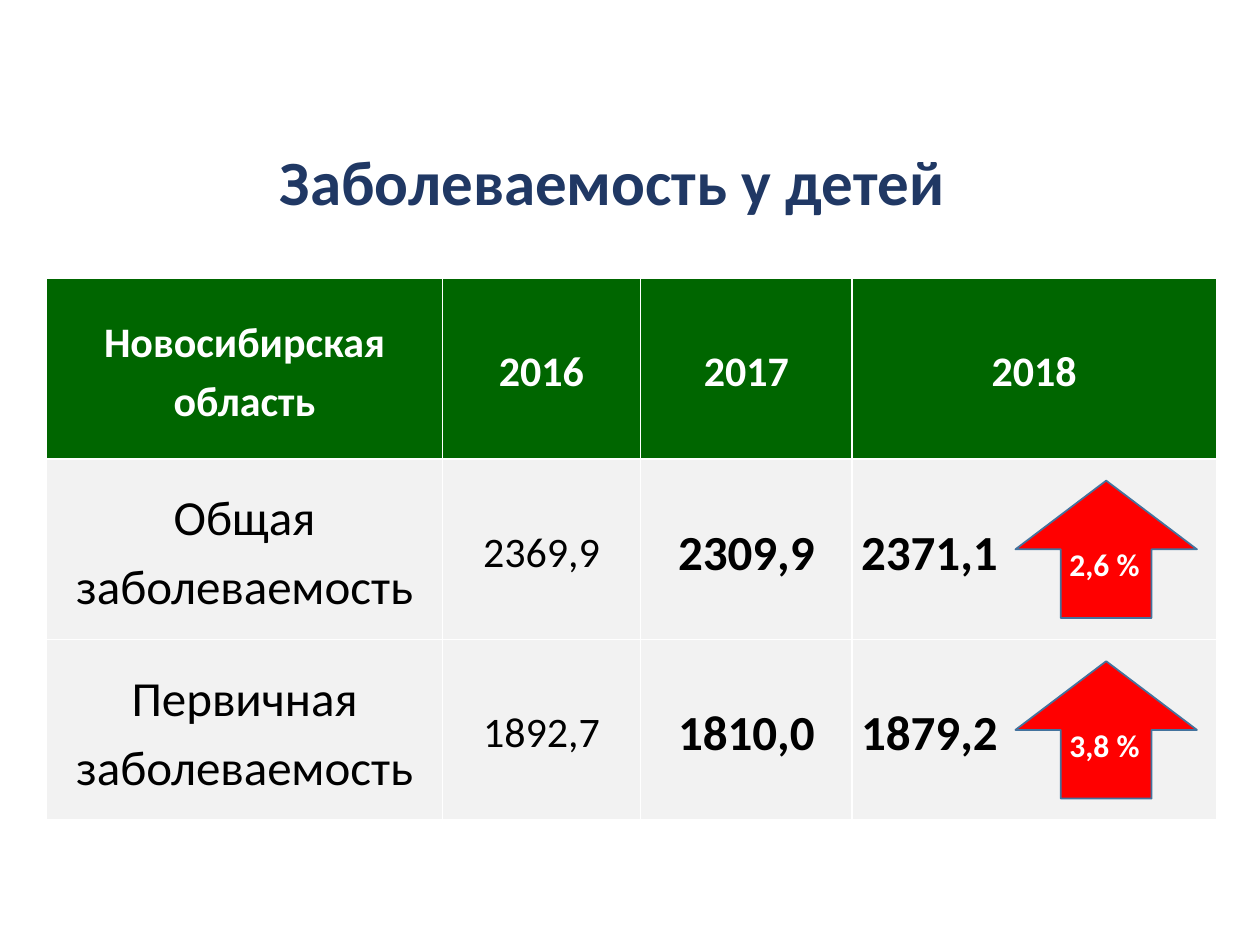
from lxml import etree
from pptx import Presentation, util as u
from pptx.dml.color import RGBColor
from pptx.enum import shapes, text
from pptx.oxml import ns

WHITE = RGBColor(0xFF, 0xFF, 0xFF)
BLACK = RGBColor(0, 0, 0)
NAVY = RGBColor(0x20, 0x38, 0x64)
GREEN = RGBColor(0, 0x66, 0)
PALE = RGBColor(0xF2, 0xF2, 0xF2)
RED = RGBColor(0xFF, 0, 0)
STEEL = RGBColor(0x43, 0x73, 0x9E)

COLUMNS = (7.98, 3.99, 4.27, 7.34)
ROW_HEIGHT = 3.64
TABLE_LEFT, TABLE_TOP = 0.94, 5.61
HEADER = ("Новосибирская область", "2016", "2017", "2018")
ROWS = (
    ("Общая заболеваемость", "2369,9", "2309,9", "2371,1"),
    ("Первичная заболеваемость", "1892,7", "1810,0", "1879,2"),
)
GROWTH = ("2,6 %", "3,8 %")
BODY_FORMATS = (
    {"size": 28, "bold": False},
    {"size": 24, "bold": False},
    {"size": 28},
    {"size": 28, "align": text.PP_ALIGN.LEFT},
)


def write(frame, words, size=24, color=BLACK, bold=True,
          align=text.PP_ALIGN.CENTER, spacing=None):
    """Put one formatted paragraph into a text frame."""
    para = frame.paragraphs[0]
    para.alignment = align
    para.line_spacing = spacing
    span = para.add_run()
    span.text = words
    span.font.name = "Calibri"
    span.font.size = u.Pt(size)
    span.font.bold = bold
    span.font.color.rgb = color


def add_label(page, words, left, top, width, height, **style):
    """Add a wrapping text box."""
    box = page.shapes.add_textbox(u.Cm(left), u.Cm(top), u.Cm(width), u.Cm(height))
    box.text_frame.word_wrap = True
    box.text_frame.vertical_anchor = text.MSO_ANCHOR.MIDDLE
    write(box.text_frame, words, **style)


def add_borders(cell):
    """Give a cell thin white borders ahead of its fill."""
    properties = cell._tc.get_or_add_tcPr()
    for index, side in enumerate(("lnL", "lnR", "lnT", "lnB")):
        line = etree.Element(ns.qn(f"a:{side}"), w=str(u.Pt(1)))
        fill = etree.SubElement(line, ns.qn("a:solidFill"))
        etree.SubElement(fill, ns.qn("a:srgbClr"), val=str(WHITE))
        properties.insert(index, line)


def fill_cell(cell, words, fill, **style):
    """Format one table cell and write its text."""
    cell.fill.solid()
    cell.fill.fore_color.rgb = fill
    cell.vertical_anchor = text.MSO_ANCHOR.MIDDLE
    cell.margin_left = cell.margin_right = u.Cm(0.18)
    cell.margin_top = cell.margin_bottom = 0
    add_borders(cell)
    write(cell.text_frame, words, spacing=1.15, **style)


def add_rates(page):
    """Add the table of rates by year."""
    count = len(ROWS) + 1
    table = page.shapes.add_table(
        count, len(COLUMNS), u.Cm(TABLE_LEFT), u.Cm(TABLE_TOP),
        u.Cm(sum(COLUMNS)), u.Cm(ROW_HEIGHT * count)).table
    for row in table.rows:
        row.height = u.Cm(ROW_HEIGHT)
    for column, width in enumerate(COLUMNS):
        table.columns[column].width = u.Cm(width)
        fill_cell(table.cell(0, column), HEADER[column], GREEN, color=WHITE)
        for number, values in enumerate(ROWS, 1):
            fill_cell(table.cell(number, column), values[column], PALE,
                      **BODY_FORMATS[column])


def add_growth(page, words, top):
    """Add a red up arrow with its percentage."""
    arrow = page.shapes.add_shape(shapes.MSO_SHAPE.UP_ARROW, u.Cm(20.47),
                                  u.Cm(top), u.Cm(3.66), u.Cm(2.77))
    arrow.shadow.inherit = False
    arrow.fill.solid()
    arrow.fill.fore_color.rgb = RED
    arrow.line.color.rgb = STEEL
    arrow.line.width = u.Pt(1)
    add_label(page, words, 21.31, top + 1.17, 2.57, 1.02, size=18, color=WHITE,
              align=text.PP_ALIGN.LEFT)


def main():
    """Build the slide and save it."""
    deck = Presentation()
    deck.slide_width, deck.slide_height = u.Cm(25.4), u.Cm(19.05)
    page = deck.slides.add_slide(deck.slide_layouts[6])
    add_rates(page)
    add_label(page, "Заболеваемость у детей", 2.39, 2.74, 19.91, 1.8,
              size=36, color=NAVY)
    for number, words in enumerate(GROWTH, 1):
        add_growth(page, words, TABLE_TOP + ROW_HEIGHT * number + 0.44)
    deck.save("out.pptx")


if __name__ == "__main__":
    main()
